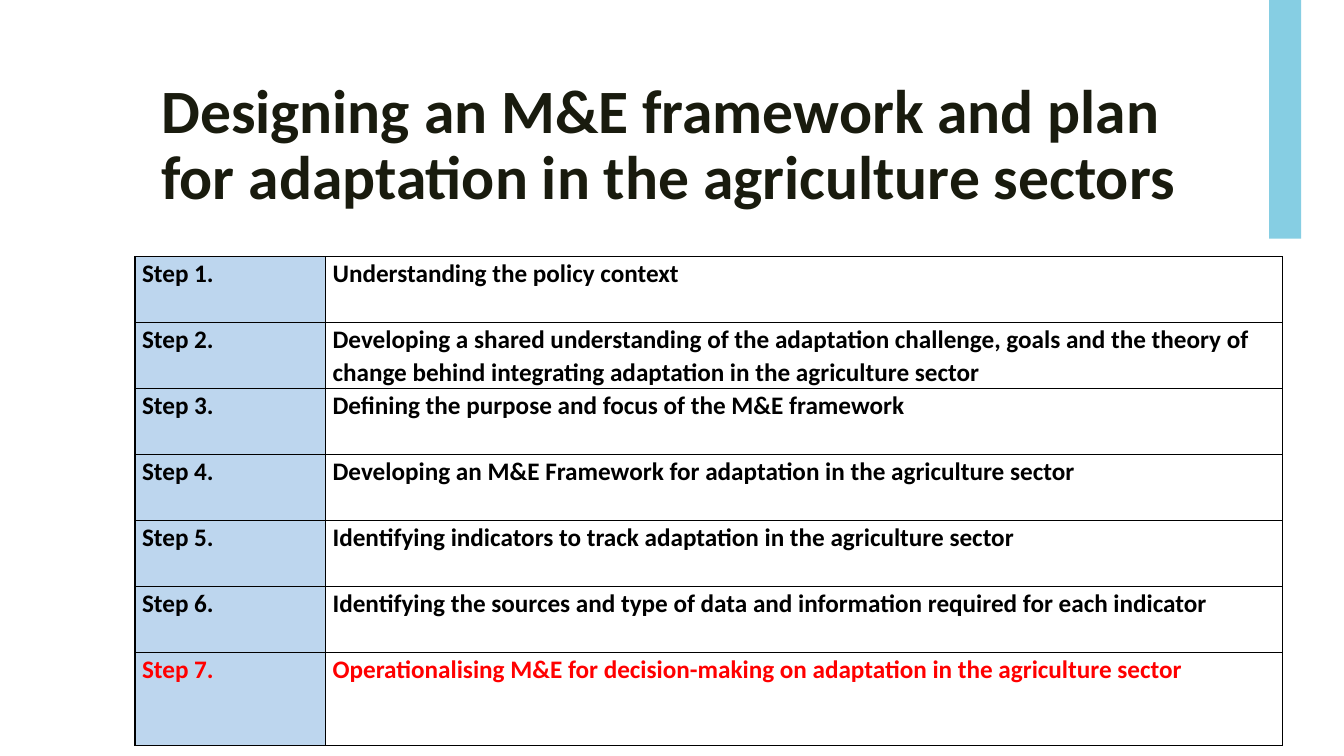
"""Build a slide listing the seven steps of an M&E framework for adaptation."""
from pptx import Presentation
from pptx.dml.color import RGBColor
from pptx.enum.shapes import MSO_SHAPE
from pptx.enum.text import MSO_ANCHOR, MSO_AUTO_SIZE, PP_ALIGN
from pptx.oxml import parse_xml
from pptx.oxml.ns import nsdecls
from pptx.util import Pt

FONT = "Calibri"
BLACK = RGBColor(0x00, 0x00, 0x00)
RED = RGBColor(0xFF, 0x00, 0x00)
TITLE_INK = RGBColor(0x19, 0x1B, 0x0E)
ACCENT = RGBColor(0x86, 0xCE, 0xE3)
STEP_FILL = RGBColor(0xBD, 0xD6, 0xEE)

TITLE = "Designing an M&E framework and plan for adaptation in the agriculture sectors"
STEPS = [
    "Understanding the policy context",
    "Developing a shared understanding of the adaptation challenge, goals and "
    "the theory of change behind integrating adaptation in the agriculture sector",
    "Defining the purpose and focus of the M&E framework",
    "Developing an M&E Framework for adaptation in the agriculture sector",
    "Identifying indicators to track adaptation in the agriculture sector",
    "Identifying the sources and type of data and information required for each indicator",
    "Operationalising M&E for decision-making on adaptation in the agriculture sector",
]
COLUMN_WIDTHS = (Pt(136.1), Pt(683.3))
ROW_HEIGHT = Pt(47.15)
LAST_ROW_HEIGHT = Pt(66.2)


def style_paragraph(paragraph, size, color, spacing):
    """Set the bold font, colour and line spacing of a paragraph."""
    paragraph.alignment = PP_ALIGN.LEFT
    paragraph.line_spacing = spacing
    font = paragraph.font
    font.name, font.size, font.bold = FONT, Pt(size), True
    font.color.rgb = color


def add_accent_bar(slide):
    """Add the coloured bar at the top right."""
    bar = slide.shapes.add_shape(MSO_SHAPE.RECTANGLE, Pt(906.5), 0, Pt(23), Pt(170.6))
    bar.shadow.inherit = False
    bar.fill.solid()
    bar.fill.fore_color.rgb = ACCENT
    bar.line.fill.background()


def set_title(slide):
    """Place and format the title."""
    title = slide.shapes.title
    title.left, title.top, title.width, title.height = Pt(108), Pt(54), Pt(756), Pt(116.6)
    frame = title.text_frame
    frame.text = TITLE
    frame.word_wrap = True
    frame.auto_size = MSO_AUTO_SIZE.NONE
    frame.vertical_anchor = MSO_ANCHOR.TOP
    style_paragraph(frame.paragraphs[0], 44, TITLE_INK, 0.89)


def add_borders(cell):
    """Draw a thin black line on all four sides of a cell."""
    properties = cell._tc.get_or_add_tcPr()
    for side in ("lnL", "lnR", "lnT", "lnB"):
        properties.append(parse_xml(
            f'<a:{side} {nsdecls("a")} w="{Pt(1)}"><a:solidFill>'
            f'<a:srgbClr val="{BLACK}"/></a:solidFill></a:{side}>'))


def fill_cell(cell, text, color, fill=None):
    """Write a table cell with its borders and background."""
    cell.margin_left = cell.margin_right = Pt(5)
    cell.margin_top = cell.margin_bottom = 0
    cell.text = text
    style_paragraph(cell.text_frame.paragraphs[0], 18, color, 1.07)
    add_borders(cell)
    if fill is None:
        cell.fill.background()
    else:
        cell.fill.solid()
        cell.fill.fore_color.rgb = fill


def add_steps_table(slide):
    """Add the table of numbered steps, with the last one highlighted."""
    last = len(STEPS) - 1
    height = ROW_HEIGHT * last + LAST_ROW_HEIGHT
    table = slide.shapes.add_table(
        len(STEPS), 2, Pt(96.5), Pt(183.3), sum(COLUMN_WIDTHS), height).table
    table.first_row = table.horz_banding = False
    for column, width in zip(table.columns, COLUMN_WIDTHS):
        column.width = width
    for index, step in enumerate(STEPS):
        table.rows[index].height = LAST_ROW_HEIGHT if index == last else ROW_HEIGHT
        color = RED if index == last else BLACK
        fill_cell(table.cell(index, 0), f"Step {index + 1}.", color, STEP_FILL)
        fill_cell(table.cell(index, 1), step, color)


def main():
    """Create and save the presentation."""
    presentation = Presentation()
    presentation.slide_width, presentation.slide_height = Pt(960), Pt(540)
    slide = presentation.slides.add_slide(presentation.slide_layouts[5])
    add_accent_bar(slide)
    set_title(slide)
    add_steps_table(slide)
    presentation.save("out.pptx")


if __name__ == "__main__":
    main()
